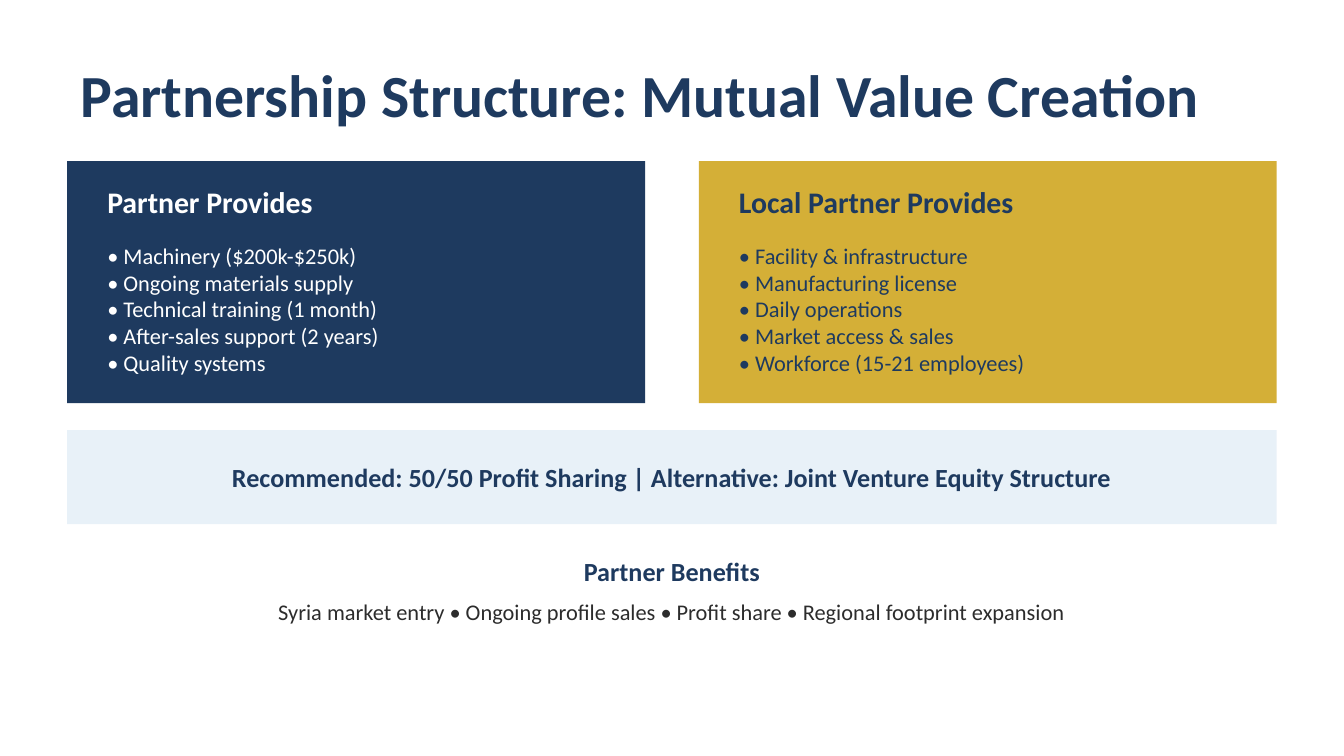
from pptx import Presentation
from pptx.dml.color import RGBColor
from pptx.enum.shapes import MSO_SHAPE
from pptx.enum.text import MSO_ANCHOR, PP_ALIGN
from pptx.util import Inches, Pt

NAVY = RGBColor(0x1E, 0x3A, 0x5F)
GOLD = RGBColor(0xD4, 0xAF, 0x37)
PALE_BLUE = RGBColor(0xE8, 0xF1, 0xF8)
WHITE = RGBColor(0xFF, 0xFF, 0xFF)
CHARCOAL = RGBColor(0x2C, 0x2C, 0x2C)

FONT = "Calibri"
SLIDE_WIDTH = 10
MARGIN = 0.5
CONTENT_WIDTH = SLIDE_WIDTH - 2 * MARGIN
CARD_WIDTH = 4.3
CARD_GAP = CONTENT_WIDTH - 2 * CARD_WIDTH
CARD_PADDING = 0.2

CARDS = [
    ("Partner Provides", NAVY, WHITE, [
        "Machinery ($200k-$250k)",
        "Ongoing materials supply",
        "Technical training (1 month)",
        "After-sales support (2 years)",
        "Quality systems",
    ]),
    ("Local Partner Provides", GOLD, NAVY, [
        "Facility & infrastructure",
        "Manufacturing license",
        "Daily operations",
        "Market access & sales",
        "Workforce (15-21 employees)",
    ]),
]


def add_text(slide, left, top, width, height, text, size, color,
             bold=False, align=PP_ALIGN.LEFT):
    box = slide.shapes.add_textbox(
        Inches(left), Inches(top), Inches(width), Inches(height))
    text_frame = box.text_frame
    text_frame.word_wrap = True
    text_frame.vertical_anchor = MSO_ANCHOR.MIDDLE
    text_frame.text = text
    for paragraph in text_frame.paragraphs:
        paragraph.alignment = align
        for run in paragraph.runs:
            run.font.name = FONT
            run.font.size = Pt(size)
            run.font.bold = bold
            run.font.color.rgb = color


def add_panel(slide, left, top, width, height, fill):
    panel = slide.shapes.add_shape(
        MSO_SHAPE.RECTANGLE,
        Inches(left), Inches(top), Inches(width), Inches(height))
    panel.shadow.inherit = False
    panel.fill.solid()
    panel.fill.fore_color.rgb = fill
    panel.line.fill.background()


def add_card(slide, left, top, width, height, heading, fill, color, items):
    add_panel(slide, left, top, width, height, fill)
    text_left = left + CARD_PADDING
    text_width = width - 2 * CARD_PADDING
    add_text(slide, text_left, top + 0.15, text_width, 0.3,
             heading, 16, color, bold=True)
    bullets = "\n".join(f"• {item}" for item in items)
    add_text(slide, text_left, top + 0.5, text_width, height - 0.6,
             bullets, 12, color)


def add_recommendation(slide, left, top, width, height):
    add_panel(slide, left, top, width, height, PALE_BLUE)
    add_text(slide, left, top, width, height,
             "Recommended: 50/50 Profit Sharing | "
             "Alternative: Joint Venture Equity Structure",
             14, NAVY, bold=True, align=PP_ALIGN.CENTER)


def add_benefits(slide, left, top, width, height):
    row_height = height / 2
    add_text(slide, left, top, width, row_height, "Partner Benefits",
             14, NAVY, bold=True, align=PP_ALIGN.CENTER)
    add_text(slide, left, top + row_height, width, row_height,
             "Syria market entry • Ongoing profile sales • "
             "Profit share • Regional footprint expansion",
             12, CHARCOAL, align=PP_ALIGN.CENTER)


def main():
    presentation = Presentation()
    presentation.slide_width = Inches(SLIDE_WIDTH)
    presentation.slide_height = Inches(SLIDE_WIDTH * 9 / 16)
    slide = presentation.slides.add_slide(presentation.slide_layouts[6])
    slide.background.fill.solid()
    slide.background.fill.fore_color.rgb = WHITE

    add_text(slide, MARGIN, 0.4, CONTENT_WIDTH, 0.6,
             "Partnership Structure: Mutual Value Creation",
             32, NAVY, bold=True)
    for index, card in enumerate(CARDS):
        left = MARGIN + index * (CARD_WIDTH + CARD_GAP)
        add_card(slide, left, 1.2, CARD_WIDTH, 1.8, *card)
    add_recommendation(slide, MARGIN, 3.2, CONTENT_WIDTH, 0.7)
    add_benefits(slide, MARGIN, 4.1, CONTENT_WIDTH, 0.6)

    presentation.save("out.pptx")


if __name__ == "__main__":
    main()
